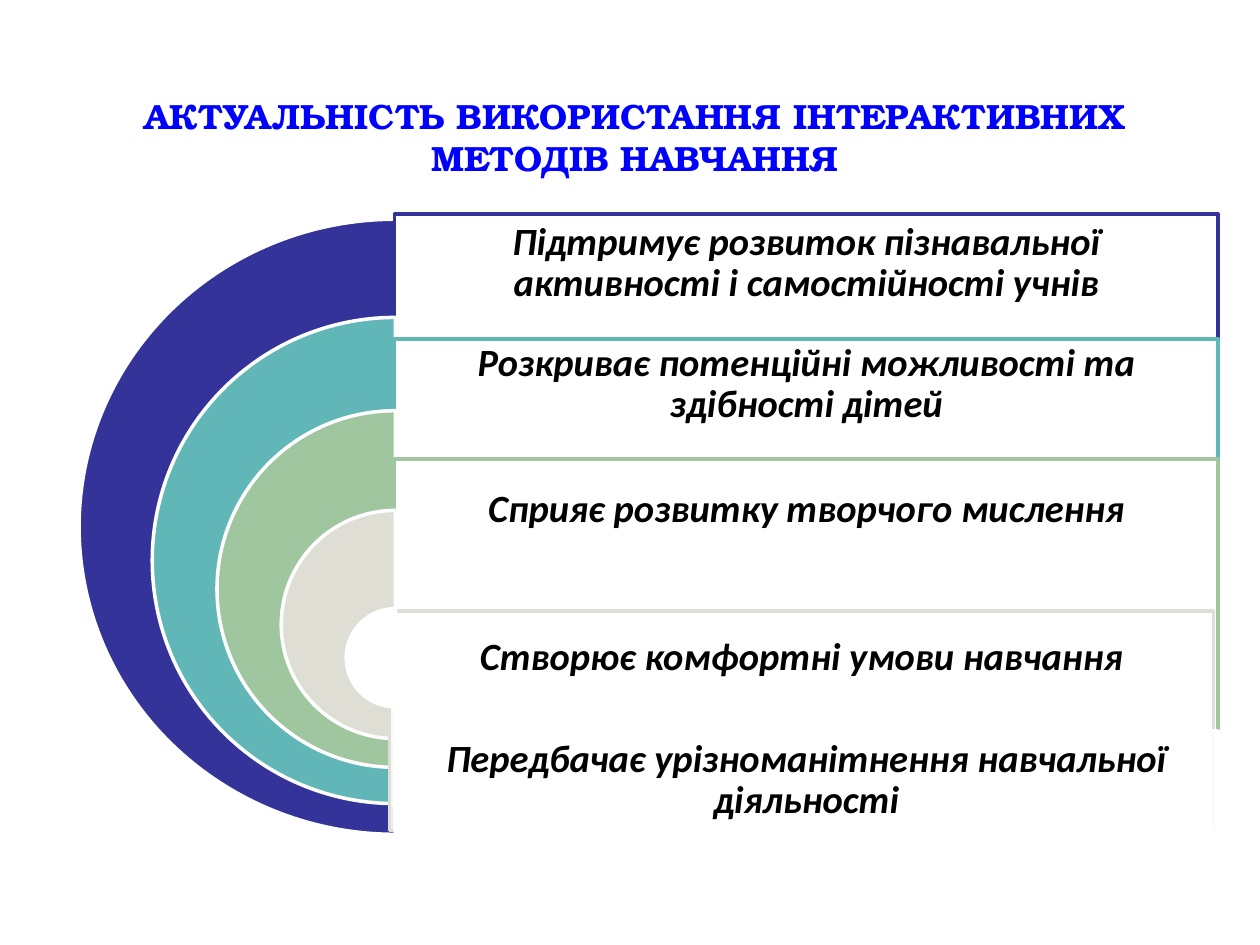
from lxml import etree
from pptx import Presentation
from pptx.dml.color import RGBColor
from pptx.enum import shapes, text
from pptx.oxml.ns import qn
from pptx.util import Cm, Pt

MID = 7.97  # common centre line of the half discs
WIDE = 16.61

# colour, disc (top, width, height), panel (left, top, height), label height, label
LAYERS = [
    ("333399", (4.42, 12.75, 12.4), (7.95, 4.32, 12.4), 1.98,
     "Підтримує розвиток пізнавальної активності і самостійності учнів"),
    ("61B7B7", (6.4, 9.8, 9.8), (7.95, 6.83, 9.19), 1.85,
     "Розкриває потенційні можливості та здібності дітей"),
    ("9FC69F", (8.28, 7.19, 7.19), (7.95, 9.25, 7.47), 2.06,
     "Сприяє розвитку творчого мислення"),
    ("DEDED4", (10.29, 4.6, 4.6), (7.85, 12.32, 4.42), 1.9,
     "Створює комфортні умови навчання"),
    ("FFFFFF", (12.27, 1.98, 1.98), (7.95, 14.73, 2.01), 2.01,
     "Передбачає урізноманітнення навчальної діяльності"),
]


def rgb(code):
    return RGBColor.from_string(code)


def style(font, name, size, color, italic=False):
    font.name, font.size = name, Pt(size)
    font.bold, font.italic = True, italic
    font.color.rgb = rgb(color)


def add_form(group, kind, box, fill, line):
    form = group.shapes.add_shape(kind, *map(Cm, box))
    form.shadow.inherit = False
    form.fill.solid()
    form.fill.fore_color.rgb = rgb(fill)
    form.line.color.rgb = rgb(line)
    form.line.width = Pt(2)
    return form


def add_disc(group, box, color):
    disc = add_form(group, shapes.MSO_SHAPE.PIE, box, color, "FFFFFF")
    disc.adjustments[0], disc.adjustments[1] = 54, 162


def add_panel(group, box, color):
    panel = add_form(group, shapes.MSO_SHAPE.RECTANGLE, box, "FFFFFF", color)
    # Let the layers below show through slightly
    tint = panel.fill._xPr.find(qn("a:solidFill"))[0]
    etree.SubElement(tint, qn("a:alpha"), val="90000")


def add_label(group, box, words):
    frame = group.shapes.add_textbox(*map(Cm, box)).text_frame
    frame.word_wrap = True
    frame.vertical_anchor = text.MSO_ANCHOR.MIDDLE
    frame.margin_left = frame.margin_right = Cm(0.23)
    frame.margin_top = frame.margin_bottom = Cm(0.23)
    para = frame.paragraphs[0]
    para.text = words
    para.alignment = text.PP_ALIGN.CENTER
    para.line_spacing = 0.9
    style(para.font, "Calibri", 22, "000000", True)


def add_layers(slide):
    group = slide.shapes.add_group_shape()
    for color, (top, wide, high), (left, start, deep), tall, words in LAYERS:
        add_disc(group, (MID - wide / 2, top, wide, high), color)
        add_panel(group, (left, start, WIDE, deep), color)
        add_label(group, (left, start, WIDE, tall), words)


def add_title(slide, box):
    title = slide.shapes.title
    title.left, title.top, title.width, title.height = map(Cm, box)
    frame = title.text_frame
    frame.word_wrap = True
    frame.auto_size = text.MSO_AUTO_SIZE.NONE
    frame.text = "АКТУАЛЬНІСТЬ ВИКОРИСТАННЯ ІНТЕРАКТИВНИХ\nМЕТОДІВ НАВЧАННЯ"
    for para in frame.paragraphs:
        para.alignment = text.PP_ALIGN.CENTER
        style(para.font, "TeX Gyre Bonum", 20, "0000FF")


def main():
    deck = Presentation()
    deck.slide_width, deck.slide_height = Cm(25.4), Cm(19.05)
    slide = deck.slides.add_slide(deck.slide_layouts[5])
    add_title(slide, (2.39, 1.78, 20.83, 1.96))
    add_layers(slide)
    deck.save("out.pptx")


if __name__ == "__main__":
    main()
